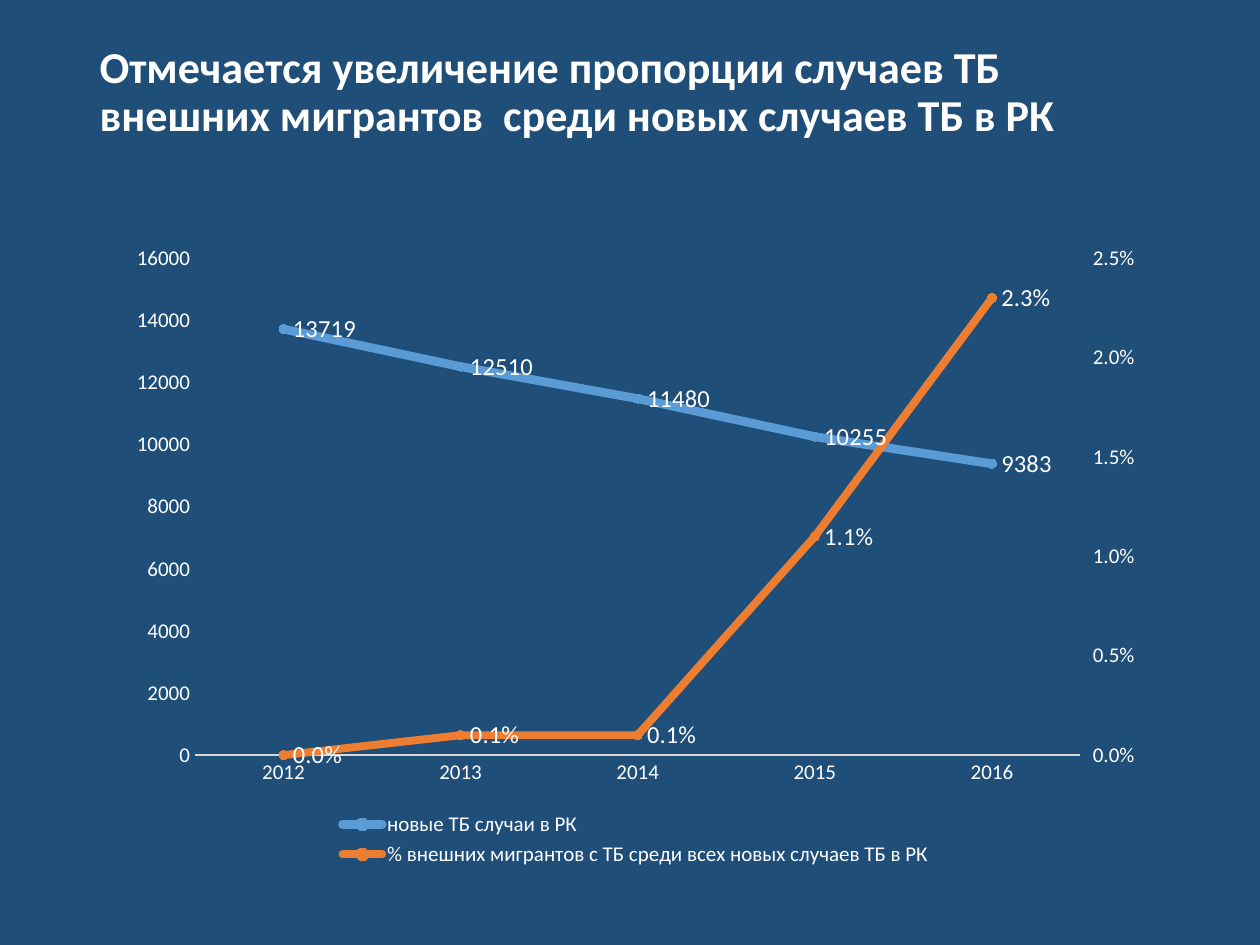
from copy import deepcopy

from pptx import Presentation
from pptx.chart.axis import CategoryAxis, ValueAxis
from pptx.chart.data import CategoryChartData
from pptx.dml.color import RGBColor
from pptx.enum.chart import (XL_CHART_TYPE, XL_LABEL_POSITION, XL_LEGEND_POSITION,
                             XL_MARKER_STYLE, XL_TICK_MARK)
from pptx.enum.text import MSO_ANCHOR, PP_ALIGN
from pptx.oxml.ns import qn
from pptx.util import Inches, Pt

NAVY = RGBColor(0x1F, 0x4E, 0x79)
WHITE = RGBColor(0xFF, 0xFF, 0xFF)
BLACK = RGBColor(0x00, 0x00, 0x00)
GREY = RGBColor(0xD9, 0xD9, 0xD9)
BLUE = RGBColor(0x5B, 0x9B, 0xD5)
ORANGE = RGBColor(0xED, 0x7D, 0x31)

LINE_MARKERS = XL_CHART_TYPE.LINE_MARKERS
LABEL_RIGHT = XL_LABEL_POSITION.RIGHT
LEGEND_BOTTOM = XL_LEGEND_POSITION.BOTTOM
CIRCLE = XL_MARKER_STYLE.CIRCLE
TICK_NONE = XL_TICK_MARK.NONE
TICK_OUT = XL_TICK_MARK.OUTSIDE
MIDDLE = MSO_ANCHOR.MIDDLE
LEFT = PP_ALIGN.LEFT

TITLE = ("Отмечается увеличение пропорции случаев ТБ внешних мигрантов "
         " среди новых случаев ТБ в РК")
YEARS = ["2012", "2013", "2014", "2015", "2016"]
SERIES = [
    ("новые ТБ случаи в РК", [13719, 12510, 11480, 10255, 9383],
     "General", BLUE, 5),
    ("% внешних мигрантов с ТБ среди всех новых случаев ТБ в РК",
     [0, 0.001, 0.001, 0.011, 0.023], "0.0%", ORANGE, 4.5),
]


def style_font(font, size, color=WHITE, bold=False):
    font.name = "Calibri"
    font.size = Pt(size)
    font.bold = bold
    font.color.rgb = color


def write_text(paragraph, text, size, color=WHITE, bold=False, spacing=1.0):
    paragraph.alignment = LEFT
    paragraph.line_spacing = spacing
    run = paragraph.add_run()
    run.text = text
    style_font(run.font, size, color, bold)


class SlideBuilder:
    def __init__(self, presentation):
        self.slide = presentation.slides.add_slide(presentation.slide_layouts[5])
        background = self.slide.background.fill
        background.solid()
        background.fore_color.rgb = NAVY

    def title(self, text, left, top, width, height):
        heading = self.slide.shapes.title
        heading.left, heading.top = Inches(left), Inches(top)
        heading.width, heading.height = Inches(width), Inches(height)
        heading.text_frame.word_wrap = True
        heading.text_frame.vertical_anchor = MIDDLE
        paragraph = heading.text_frame.paragraphs[0]
        write_text(paragraph, text, 25.2, bold=True, spacing=0.9)
        paragraph.add_line_break()
        style_font(paragraph.font, 25.2, bold=True)

    def line_chart(self, left, top, width, height):
        data = CategoryChartData()
        data.categories = YEARS
        for name, values, number_format, _, _ in SERIES:
            data.add_series(name, values, number_format)
        chart = self.slide.shapes.add_chart(
            LINE_MARKERS, Inches(left), Inches(top),
            Inches(width), Inches(height), data).chart
        style_font(chart.font, 10, BLACK)
        chart.has_title = False
        chart.has_legend = True
        chart.legend.position = LEGEND_BOTTOM
        chart.legend.include_in_layout = False
        style_font(chart.legend.font, 12)
        chart.plots[0].vary_by_categories = False
        for series, (_, _, number_format, color, weight) in zip(chart.plots[0].series, SERIES):
            self.series(series, number_format, color, weight)
        for outline in chart.element.xpath("//c:ser/c:spPr/a:ln"):
            outline.set("cap", "rnd")

        self.axis(chart.category_axis, TICK_NONE)
        chart.category_axis.format.line.color.rgb = GREY
        chart.category_axis.format.line.width = Pt(0.75)
        self.value_axis(chart.value_axis, TICK_NONE, 16000, 2000, "General")
        self.value_axis(self.second_axis(chart), TICK_OUT, 0.025, 0.005, "0.0%")

    def series(self, series, number_format, color, weight):
        series.smooth = False
        series.format.line.color.rgb = color
        series.format.line.width = Pt(weight)
        series.marker.style = CIRCLE
        series.marker.size = 5
        for part in (series.marker.format.fill, series.marker.format.line.fill):
            part.solid()
            part.fore_color.rgb = color
        labels = series.data_labels
        labels.show_value = True
        labels.position = LABEL_RIGHT
        labels.number_format = number_format
        labels.number_format_is_linked = False
        style_font(labels.font, 14)

    def axis(self, axis, tick):
        axis.has_major_gridlines = False
        axis.major_tick_mark = tick
        axis.minor_tick_mark = TICK_NONE
        style_font(axis.tick_labels.font, 12)

    def value_axis(self, axis, tick, maximum, step, number_format):
        self.axis(axis, tick)
        axis.minimum_scale, axis.maximum_scale = 0, maximum
        axis.major_unit = step
        axis.tick_labels.number_format = number_format
        axis.tick_labels.number_format_is_linked = False
        axis.format.line.fill.background()

    def second_axis(self, chart):
        first_plot = chart.element.xpath("//c:lineChart")[0]
        years = chart.element.xpath("//c:catAx")[0]
        cases = chart.element.xpath("//c:valAx")[0]
        right_plot, right_years, share = map(deepcopy, (first_plot, years, cases))
        first_plot.remove(first_plot.findall(qn("c:ser"))[1])
        right_plot.remove(right_plot.findall(qn("c:ser"))[0])
        first_plot.addnext(right_plot)
        cases.addnext(share)
        share.addnext(right_years)

        years_id, share_id = "50010", "50020"
        for axis_id, value in zip(right_plot.findall(qn("c:axId")), (years_id, share_id)):
            axis_id.set("val", value)
        for axis, own, other in ((right_years, years_id, share_id),
                                 (share, share_id, years_id)):
            axis.find(qn("c:axId")).set("val", own)
            axis.find(qn("c:crossAx")).set("val", other)
        share.find(qn("c:axPos")).set("val", "r")
        share.find(qn("c:crosses")).set("val", "max")
        CategoryAxis(right_years).visible = False
        return ValueAxis(share)


def main():
    presentation = Presentation()
    presentation.slide_width, presentation.slide_height = Inches(10), Inches(7.5)
    builder = SlideBuilder(presentation)
    builder.title(TITLE, 0.69, 0.4, 8.62, 1.1)
    builder.line_chart(0.92, 1.85, 8.25, 5.07)
    presentation.save("out.pptx")


if __name__ == "__main__":
    main()
